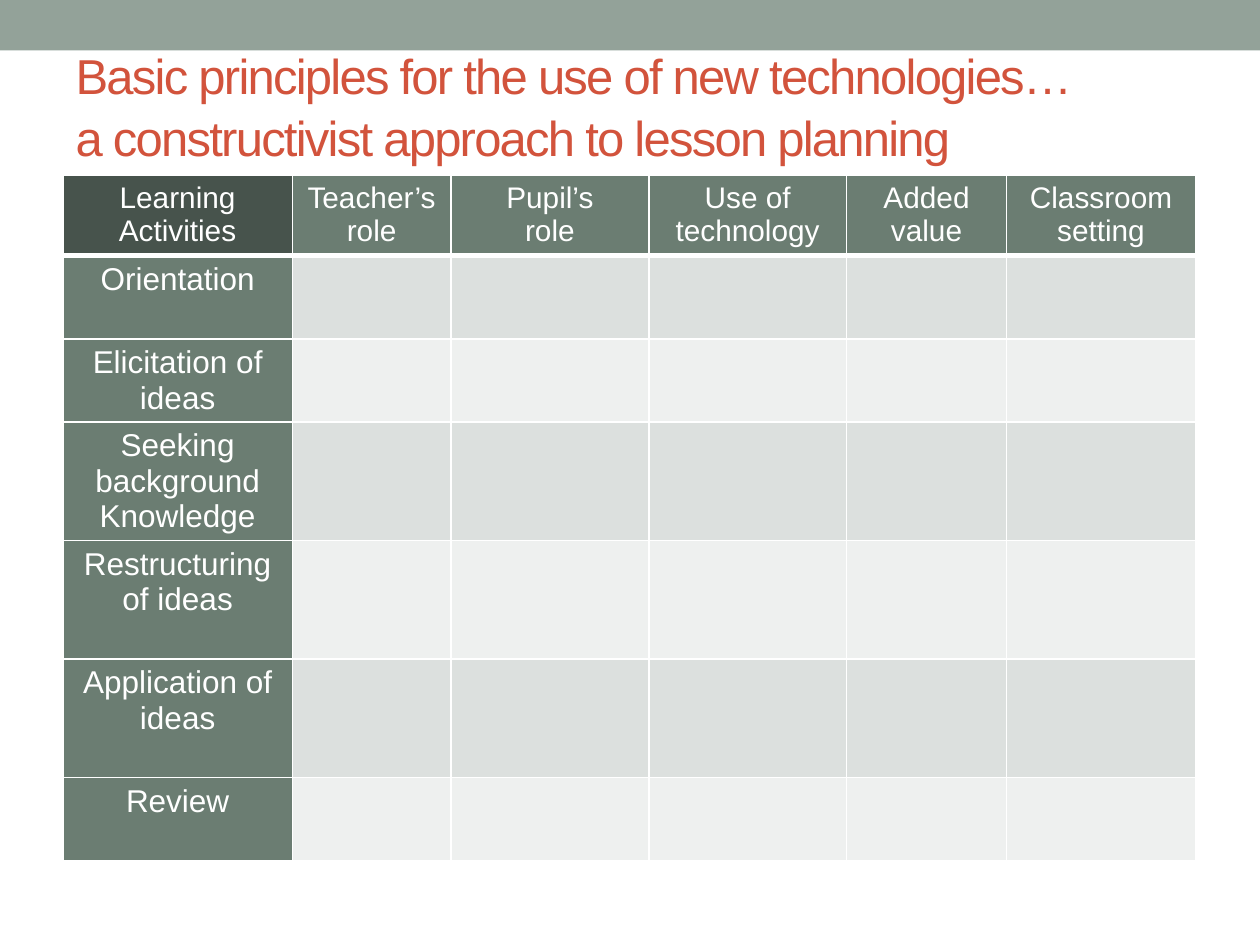
from lxml.etree import SubElement
from pptx import Presentation
from pptx.dml.color import RGBColor
from pptx.enum.shapes import MSO_SHAPE
from pptx.enum.text import MSO_ANCHOR, PP_ALIGN
from pptx.oxml.ns import qn
from pptx.util import Inches, Pt

# Content
TITLE = ("Basic principles for the use of new technologies…\v"
         "a constructivist approach to lesson planning")
HEADINGS = ["Learning Activities", "Teacher’s role", "Pupil’s\nrole",
            "Use of technology", "Added value", "Classroom setting"]
ACTIVITIES = ["Orientation", "Elicitation of ideas",
              "Seeking background Knowledge", "Restructuring of ideas",
              "Application of ideas", "Review"]
COLUMN_WIDTHS = [1.82, 1.26, 1.57, 1.57, 1.27, 1.5]
ROW_HEIGHTS = [0.64, 0.66, 0.66, 0.94, 0.94, 0.94, 0.66]

FONT = "Arial"
WHITE, BAR, RED = "FFFFFF", "93A299", "D2533C"
CORNER, GREEN = "47534C", "6B7D72"
BANDS = ["EEF0EF", "DCE0DE"]


def paint(fill, color):
    fill.solid()
    fill.fore_color.rgb = RGBColor.from_string(color)


def style(paragraph, size, color):
    paragraph.font.name = FONT
    paragraph.font.size = Pt(size)
    paragraph.font.color.rgb = RGBColor.from_string(color)


def set_borders(cell, top, bottom):
    """Draw white cell borders; top and bottom widths are in points."""
    properties = cell._tc.get_or_add_tcPr()
    sides = [("lnL", 1), ("lnR", 1), ("lnT", top), ("lnB", bottom)]
    for position, (side, width) in enumerate(sides):
        line = SubElement(properties, qn(f"a:{side}"), w=str(Pt(width)))
        solid = SubElement(line, qn("a:solidFill"))
        SubElement(solid, qn("a:srgbClr"), val=WHITE)
        properties.insert(position, line)


def cell_color(row, column):
    if row == 0 and column == 0:
        return CORNER
    if row == 0 or column == 0:
        return GREEN
    return BANDS[row % 2]


prs = Presentation()
prs.slide_width, prs.slide_height = Inches(10), Inches(7.5)
slide = prs.slides.add_slide(prs.slide_layouts[5])

# Top bar
bar = slide.shapes.add_shape(MSO_SHAPE.RECTANGLE, 0, 0, prs.slide_width, Inches(0.4))
bar.shadow.inherit = False
paint(bar.fill, BAR)
bar.line.fill.background()

# Title
title = slide.shapes.title
title.left, title.top = Inches(0.5), Inches(0.29)
title.width, title.height = Inches(9), Inches(1.08)
title.text_frame.text = TITLE
title.text_frame.vertical_anchor = MSO_ANCHOR.MIDDLE
heading = title.text_frame.paragraphs[0]
heading.alignment = PP_ALIGN.LEFT
heading.line_spacing = 1.05
style(heading, 28, RED)
for run in heading.runs:
    run._r.get_or_add_rPr().set("spc", "-100")

# Lesson planning table
rows = [HEADINGS] + [[activity] + [""] * (len(HEADINGS) - 1) for activity in ACTIVITIES]
table = slide.shapes.add_table(
    len(rows), len(HEADINGS), Inches(0.5), Inches(1.39),
    Inches(sum(COLUMN_WIDTHS)), Inches(sum(ROW_HEIGHTS))).table
table.first_col = True
for column, width in zip(table.columns, COLUMN_WIDTHS):
    column.width = Inches(width)
for row, height in zip(table.rows, ROW_HEIGHTS):
    row.height = Inches(height)

for r, texts in enumerate(rows):
    for c, text in enumerate(texts):
        cell = table.cell(r, c)
        paint(cell.fill, cell_color(r, c))
        set_borders(cell, top=3 if r == 1 else 1, bottom=3 if r == 0 else 1)
        if text:
            cell.text = text
            for paragraph in cell.text_frame.paragraphs:
                paragraph.alignment = PP_ALIGN.CENTER
                paragraph.font.bold = False
                style(paragraph, 17 if r == 0 else 18, WHITE)

prs.save("out.pptx")
